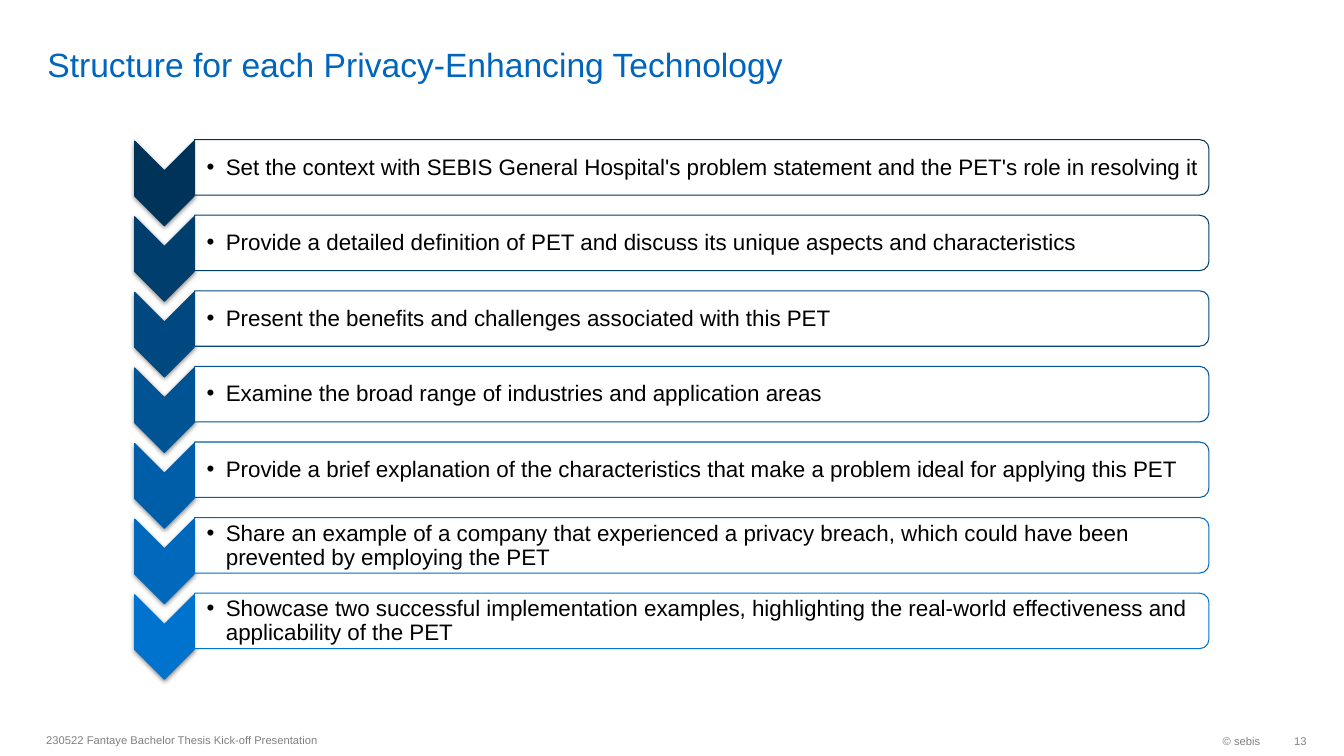
from lxml import etree
from pptx import Presentation
from pptx import util as u
from pptx.dml import color
from pptx.enum import shapes, text
from pptx.oxml import ns

STEPS = [
    ("003359", "Set the context with SEBIS General Hospital's problem statement and the PET's role in resolving it"),
    ("003E6D", "Provide a detailed definition of PET and discuss its unique aspects and characteristics"),
    ("004980", "Present the benefits and challenges associated with this PET"),
    ("005494", "Examine the broad range of industries and application areas"),
    ("005EA8", "Provide a brief explanation of the characteristics that make a problem ideal for applying this PET"),
    ("0069BB", "Share an example of a company that experienced a privacy breach, "
               "which could have been prevented by employing the PET"),
    ("0073CF", "Showcase two successful implementation examples, "
               "highlighting the real-world effectiveness and applicability of the PET"),
]
STEP_PITCH = 0.75


def rgb(value):
    return color.RGBColor.from_string(value)


def apply(target, values):
    for name, value in values.items():
        setattr(target, name, value)


def child(parent, tag, **attributes):
    return etree.SubElement(parent, ns.qn(tag), attributes)


class StepSlide:
    FONT = "Arial"
    TITLE = "0065BD"
    FOOTER = "808080"
    BODY = "000000"

    def __init__(self, presentation):
        self.slide = presentation.slides.add_slide(presentation.slide_layouts[5])

    def set_text(self, shape, content, size, ink, insets, paragraph_format, anchor, bullet=None):
        frame = shape.text_frame
        left, top, right, bottom = (u.Inches(inset) for inset in insets)
        apply(frame, {"word_wrap": True, "vertical_anchor": anchor,
                      "auto_size": text.MSO_AUTO_SIZE.NONE,
                      "margin_left": left, "margin_top": top,
                      "margin_right": right, "margin_bottom": bottom})
        paragraph = frame.paragraphs[0]
        paragraph.text = content
        apply(paragraph, paragraph_format)
        if bullet:
            properties = paragraph._p.get_or_add_pPr()
            properties.set("marL", str(u.Inches(0.19)))
            properties.set("indent", str(u.Inches(-0.19)))
            child(properties, "a:buFont", typeface=self.FONT)
            child(properties, "a:buChar", char=bullet)
        font = paragraph.runs[0].font
        apply(font, {"name": self.FONT, "size": u.Pt(size)})
        font.color.rgb = rgb(ink)

    def title(self, content, box):
        heading = self.slide.shapes.title
        apply(heading, dict(zip(("left", "top", "width", "height"), map(u.Inches, box))))
        self.set_text(heading, content, 24, self.TITLE, (0.1, 0, 0.1, 0),
                      {"alignment": text.PP_ALIGN.LEFT}, text.MSO_ANCHOR.BOTTOM)

    def label(self, content, box, size, ink, insets, paragraph_format, bullet=None):
        shape = self.slide.shapes.add_textbox(*map(u.Inches, box))
        self.set_text(shape, content, size, ink, insets, paragraph_format,
                      text.MSO_ANCHOR.MIDDLE, bullet)

    def footer(self, content, box, alignment, right_inset=0.1):
        self.label(content, box, 8, self.FOOTER, (0.1, 0.05, right_inset, 0.05),
                   {"alignment": alignment})

    def turned(self, preset, center, length, breadth, fill, line):
        x, y = center
        shape = self.slide.shapes.add_shape(
            preset, u.Inches(x - length / 2), u.Inches(y - breadth / 2),
            u.Inches(length), u.Inches(breadth))
        shape.rotation = 90
        shape.shadow.inherit = False
        shape.fill.solid()
        shape.fill.fore_color.rgb = rgb(fill)
        shape.line.color.rgb = rgb(line)
        shape.line.width = u.Pt(0.75)
        return shape

    def chevron(self, y, hue):
        shape = self.turned(shapes.MSO_SHAPE.CHEVRON, (1.63, y), 0.84, 0.59, hue, hue)
        effects = shape._element.spPr.find(ns.qn("a:effectLst"))
        shadow = child(effects, "a:outerShdw", blurRad=str(u.Pt(3.5)), dist=str(u.Pt(1.1)),
                       dir="5400000", rotWithShape="0")
        black = child(shadow, "a:srgbClr", val="000000")
        child(black, "a:alpha", val="45000")

    def bar(self, y, hue):
        shape = self.turned(shapes.MSO_SHAPE.ROUND_2_SAME_RECTANGLE, (6.96, y),
                            0.55, 10.06, "FFFFFF", hue)
        white = shape._element.spPr.find(ns.qn("a:solidFill"))[0]
        child(white, "a:alpha", val="90000")

    def step(self, offset, hue, content):
        self.chevron(1.82 + offset, hue)
        self.bar(1.66 + offset, hue)
        self.label(content, (1.93, 1.42 + offset, 10.04, 0.49), 16, self.BODY,
                   (0.12, 0.01, 0.01, 0.01),
                   {"level": 1, "line_spacing": 0.9, "space_after": u.Pt(2.4),
                    "alignment": text.PP_ALIGN.LEFT}, "•")


def main():
    presentation = Presentation()
    apply(presentation, {"slide_width": u.Inches(13.33), "slide_height": u.Inches(7.5)})
    page = StepSlide(presentation)
    page.title("Structure for each Privacy-Enhancing Technology", (0.37, 0.05, 11.58, 0.79))
    for position, (hue, content) in enumerate(STEPS):
        page.step(position * STEP_PITCH, hue, content)
    page.footer("230522 Fantaye Bachelor Thesis Kick-off Presentation",
                (0.36, 7.18, 6.3, 0.32), text.PP_ALIGN.LEFT)
    page.footer("© sebis", (10.26, 7.19, 2.34, 0.32), text.PP_ALIGN.RIGHT)
    page.footer("13", (12.6, 7.19, 0.36, 0.32), text.PP_ALIGN.RIGHT, 0)
    presentation.save("out.pptx")


if __name__ == "__main__":
    main()
